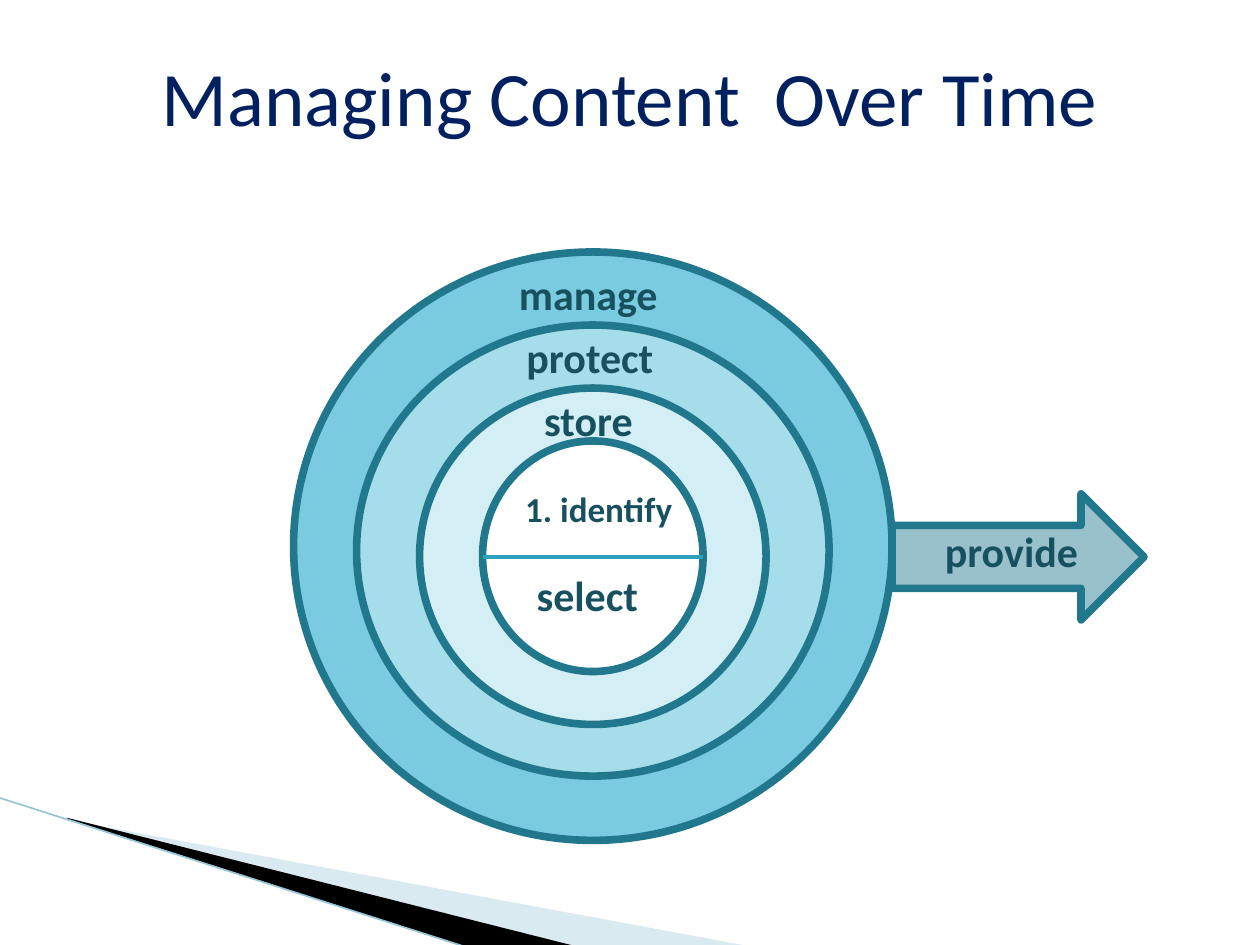
from lxml import etree
from pptx import Presentation
from pptx.dml.color import RGBColor
from pptx.enum import shapes, text
from pptx.oxml import ns
from pptx.util import Inches, Pt

COLORS = {
    "title": "002060", "label": "175160", "outline": "21788D",
    "manage": "7ACBE0", "protect": "A6DDEA", "store": "D3EEF5",
    "core": "FFFFFF", "arrow": "227A8F", "divider": "2DA2BF",
    "pale": "A0CBDC", "dark": "000000", "edge": "97C5D8",
}


class SlideBuilder:
    font = "Calibri"
    outline_width = 4.33

    def __init__(self, slide):
        self.slide = slide

    def color(self, name):
        return RGBColor.from_string(COLORS[name])

    def fill(self, shape, name, opacity=100):
        shape.shadow.inherit = False
        shape.fill.solid()
        shape.fill.fore_color.rgb = self.color(name)
        if opacity < 100:
            color = shape.fill._xPr.find(".//" + ns.qn("a:srgbClr"))
            etree.SubElement(color, ns.qn("a:alpha"), val=str(opacity * 1000))

    def run(self, paragraph, words, size, color, bold=False):
        run = paragraph.add_run()
        run.text = words
        run.font.name = self.font
        run.font.size = Pt(size)
        run.font.bold = bold
        run.font.color.rgb = self.color(color)

    def title(self, words, left, top, width, height):
        shape = self.slide.shapes.title
        shape.left, shape.top = Inches(left), Inches(top)
        shape.width, shape.height = Inches(width), Inches(height)
        frame = shape.text_frame
        frame.word_wrap = True
        frame.auto_size = text.MSO_AUTO_SIZE.NONE
        frame.vertical_anchor = text.MSO_ANCHOR.TOP
        frame.margin_top = Inches(0.09)
        paragraph = frame.paragraphs[0]
        paragraph.alignment = text.PP_ALIGN.CENTER
        self.run(paragraph, words, 44, "title")

    def label(self, words, left, top, width, height, size=24):
        box = self.slide.shapes.add_textbox(
            Inches(left), Inches(top), Inches(width), Inches(height))
        frame = box.text_frame
        frame.word_wrap = False
        frame.auto_size = text.MSO_AUTO_SIZE.SHAPE_TO_FIT_TEXT
        self.run(frame.paragraphs[0], words, size, "label", bold=True)

    def outlined(self, kind, color, left, top, width, height, opacity=100):
        shape = self.slide.shapes.add_shape(
            kind, Inches(left), Inches(top), Inches(width), Inches(height))
        self.fill(shape, color, opacity)
        shape.line.color.rgb = self.color("outline")
        shape.line.width = Pt(self.outline_width)

    def polygon(self, points, color, opacity=100):
        corners = [(Inches(x), Inches(y)) for x, y in points]
        builder = self.slide.shapes.build_freeform(*corners[0])
        builder.add_line_segments(corners[1:], close=True)
        shape = builder.convert_to_shape()
        self.fill(shape, color, opacity)
        shape.line.fill.background()

    def line(self, start, end, color, width):
        connector = self.slide.shapes.add_connector(
            shapes.MSO_CONNECTOR.STRAIGHT,
            *(Inches(value) for value in (*start, *end)))
        connector.line.color.rgb = self.color(color)
        connector.line.width = Pt(width)
        etree.SubElement(connector._element.spPr, ns.qn("a:effectLst"))


def main():
    presentation = Presentation()
    presentation.slide_width, presentation.slide_height = Inches(10), Inches(7.5)
    slide = presentation.slides.add_slide(presentation.slide_layouts[5])
    builder = SlideBuilder(slide)
    ellipse = shapes.MSO_SHAPE.OVAL

    builder.title("Managing Content  Over Time", 0.5, 0.3, 9, 1.25)

    # Corner decoration
    builder.polygon([(0.55, 6.51), (5.95, 7.51), (4.56, 7.51), (0.55, 6.5)],
                    "pale", 40)
    builder.polygon([(0.53, 6.49), (4.57, 7.51), (3.72, 7.52), (0.54, 6.5)],
                    "dark")
    builder.line((-0.01, 6.33), (3.71, 7.52), "edge", 0.95)

    # Rings, from the outside in
    for color, *box in [("manage", 2.33, 2, 4.75, 4.67),
                        ("protect", 2.83, 2.58, 3.75, 3.58),
                        ("store", 3.33, 3.08, 2.75, 2.67)]:
        builder.outlined(ellipse, color, *box)

    # Outgoing arrow and divided core
    builder.outlined(shapes.MSO_SHAPE.RIGHT_ARROW, "arrow", 7.08, 3.92, 2, 1,
                     opacity=46)
    builder.outlined(ellipse, "core", 3.83, 3.5, 1.75, 1.83)
    builder.line((3.83, 4.42), (5.58, 4.42), "divider", 2.25)

    # Labels
    builder.label("1. identify", 4.07, 3.82, 1.38, 0.44, size=20)
    for words, *box in [("select", 4.16, 4.47, 1.02, 0.51),
                        ("store", 4.22, 3.08, 0.91, 0.51),
                        ("protect", 4.08, 2.58, 1.22, 0.51),
                        ("manage", 4.02, 2.08, 1.31, 0.51),
                        ("provide", 7.4, 4.12, 1.27, 0.5)]:
        builder.label(words, *box)

    presentation.save("out.pptx")


if __name__ == "__main__":
    main()
